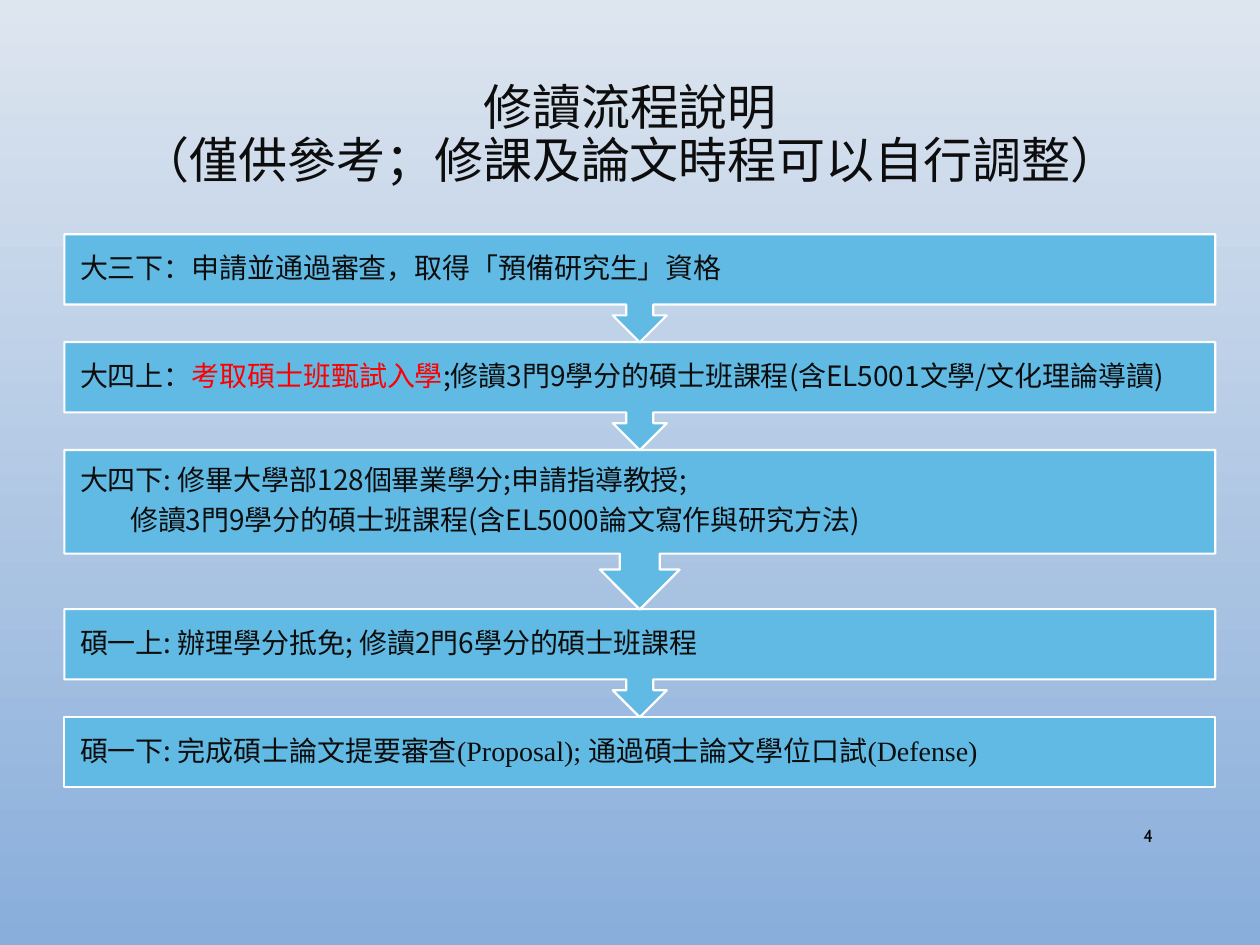
from lxml import etree
from pptx import Presentation
from pptx.dml.color import RGBColor
from pptx.enum.shapes import MSO_SHAPE
from pptx.enum.text import MSO_ANCHOR, MSO_AUTO_SIZE, PP_ALIGN
from pptx.oxml.ns import qn
from pptx.util import Pt

RECT, CALLOUT = MSO_SHAPE.RECTANGLE, MSO_SHAPE.DOWN_ARROW_CALLOUT
MIDDLE = MSO_ANCHOR.MIDDLE
LEFT, CENTER, RIGHT = PP_ALIGN.LEFT, PP_ALIGN.CENTER, PP_ALIGN.RIGHT

COLORS = {"sky": "DDE5EF", "deep": "89AEDB", "box": "60BAE4", "line": "FFFFFF",
          "text": "0D0D0D", "alert": "FF0000", "number": "000000"}
CJK, SERIF, SANS = "Noto Sans CJK SC", "Times New Roman", "Cabin"

TITLE = ["修讀流程說明", "\n", "（僅供參考；修課及論文時程可以自行調整）"]
PAGE = "4"

# Each step is a list of paragraphs; a paragraph is a list of plain strings
# or (text, format) pairs.
STEPS = [
    [["大三下：申請並通過審查，取得「預備研究生」資格"]],
    [["大四上：", ("考取碩士班甄試入學", {"color": "alert"}),
      ";修讀3門9學分的碩士班課程(含EL5001文學/文化理論導讀)"]],
    [["大四下: 修畢大學部128個畢業學分;申請指導教授;"],
     ["修讀3門9學分的碩士班課程(含EL5000論文寫作與研究方法)"]],
    [["碩一上: 辦理學分抵免; 修讀2門6學分的碩士班課程"]],
    [["碩一下: 完成碩士論文提要審查", ("(Proposal); ", {"font": SERIF}),
      "通過碩士論文學位口試", ("(Defense)", {"font": SERIF})]],
]

STEP_LEFT, STEP_TOP, STEP_WIDTH = 36.8, 133.9, 657.6
STEP_HEIGHTS = {1: 61.8, 2: 91.2}  # by number of paragraphs, arrow included
BODY_SHARE = 0.65                  # part of a step above its arrow
OVERLAP = 0.2
INSET = 8.96
INDENT = 28.6


def rgb(name):
    return RGBColor.from_string(COLORS[name])


def add_run(p, text, size, font=CJK, color="text"):
    r = p.add_run()
    r.text = text
    r.font.size, r.font.name = Pt(size), font
    r.font.color.rgb = rgb(color)
    ea = etree.SubElement(r.font._element, qn("a:ea"))
    ea.set("typeface", font)


def write(tf, paragraphs, size, align=LEFT, spacing=0.9, after=0, **fmt):
    """Fill a text frame; paragraphs after the first are indented."""
    tf.word_wrap, tf.vertical_anchor = True, MIDDLE
    tf.auto_size = MSO_AUTO_SIZE.NONE
    for i, parts in enumerate(paragraphs):
        p = tf.add_paragraph() if i else tf.paragraphs[0]
        p.alignment, p.line_spacing, p.space_after = align, spacing, Pt(after)
        if i:
            p._p.get_or_add_pPr().set("marL", str(Pt(INDENT)))
        for part in parts:
            text, own = (part, {}) if isinstance(part, str) else part
            if text == "\n":
                p.add_line_break()
            else:
                add_run(p, text, size, **{**fmt, **own})


def add_step(s, paragraphs, top, height, is_last):
    h = height * BODY_SHARE if is_last else height
    sp = s.shapes.add_shape(RECT if is_last else CALLOUT, Pt(STEP_LEFT), Pt(top),
                            Pt(STEP_WIDTH), Pt(h))
    if not is_last:
        sp.adjustments[3] = BODY_SHARE
    sp.shadow.inherit = False
    sp.fill.solid()
    sp.fill.fore_color.rgb = rgb("box")
    sp.line.color.rgb, sp.line.width = rgb("line"), Pt(1.25)
    tf = sp.text_frame
    tf.margin_left = tf.margin_right = tf.margin_top = tf.margin_bottom = Pt(INSET)
    write(tf, paragraphs, 16, after=5.6)


def main():
    prs = Presentation()
    prs.slide_width, prs.slide_height = Pt(720), Pt(540)
    s = prs.slides.add_slide(prs.slide_layouts[5])

    fill = s.background.fill
    fill.gradient()
    fill.gradient_angle = 270
    for stop, name in zip(fill.gradient_stops, ("sky", "deep")):
        stop.color.rgb = rgb(name)

    title = s.shapes.title
    title.left, title.top, title.width, title.height = Pt(54), Pt(15), Pt(612), Pt(126)
    write(title.text_frame, [TITLE], 28, align=CENTER)

    heights = [STEP_HEIGHTS[len(step)] for step in STEPS]
    tops = [STEP_TOP + sum(heights[:i]) - i * OVERLAP for i in range(len(STEPS))]
    # Last step first, so that each arrow tip lies over the next box.
    for i in reversed(range(len(STEPS))):
        add_step(s, STEPS[i], tops[i], heights[i], i == len(STEPS) - 1)

    number = s.shapes.add_textbox(Pt(620.6), Pt(463), Pt(45.4), Pt(28.8))
    write(number.text_frame, [[PAGE]], 10, align=RIGHT, spacing=1.0,
          font=SANS, color="number")

    prs.save("out.pptx")


if __name__ == "__main__":
    main()
